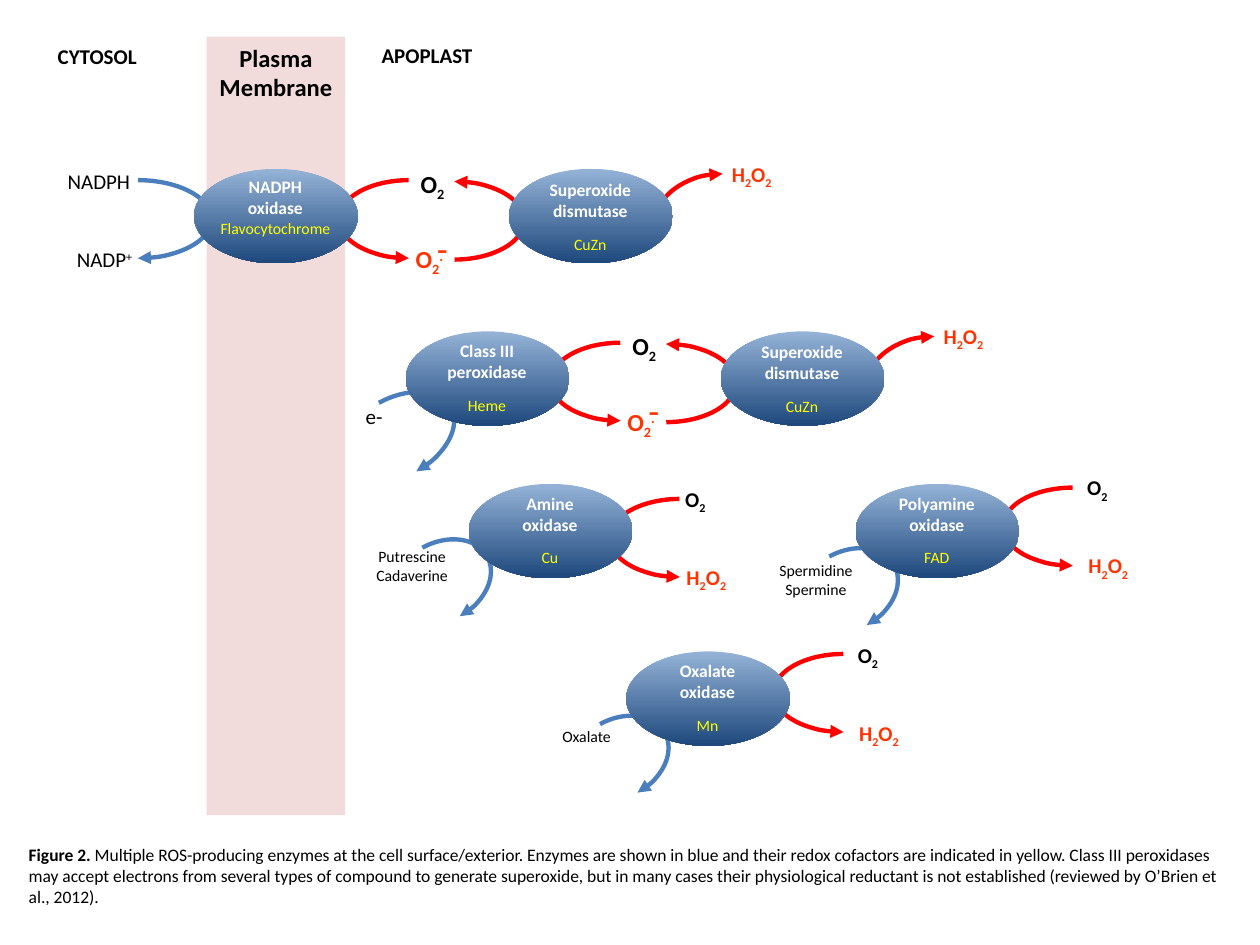
from lxml.etree import SubElement
from pptx import Presentation
from pptx.dml.color import RGBColor
from pptx.enum.shapes import MSO_SHAPE
from pptx.enum.text import MSO_AUTO_SIZE, PP_ALIGN
from pptx.oxml.ns import qn
from pptx.util import Inches, Pt

COLORS = {
    "black": "000000", "white": "FFFFFF", "red": "FF0000", "product": "FF3300",
    "blue": "4B7EBC", "cofactor": "FFFF00", "membrane": "F2DCDB",
    "enzyme_top": "95B3D7", "enzyme_bottom": "1F497D",
}

# Formulas are runs of (text, baseline shift)
SUB, SUP = -25000, 30000
O2 = [("O", 0), ("2", SUB)]
H2O2 = O2 and [("H", 0), ("2", SUB), ("O", 0), ("2", SUB)]
SUPEROXIDE = O2 + [(".", SUP)]
NADP = [("NADP", 0), ("+", SUP)]

MEMBRANE = (1.64, 0.29, 1.1, 6.18)
ENZYME_SIZE = (1.3, 0.75)

# The two chains repeat one layout; positions are those of the first chain
CHAINS = [
    {"shift": (0, 0), "name": "NADPH oxidase", "cofactor": "Flavocytochrome",
     "text_dy": (0.01, 0.35)},
    {"shift": (1.68, 1.29), "name": "Class III peroxidase", "cofactor": "Heme",
     "text_dy": (0.02, 0.46)},
]

# enzyme, product arc, O2 label and substrate arc positions
OXIDASES = [
    {"name": "Amine oxidase", "cofactor": "Cu", "at": (3.72, 3.84),
     "product_arc": (4.84, 3.96), "o2": (5.34, 3.81), "substrate_arc": (3.08, 4.31)},
    {"name": "Polyamine oxidase", "cofactor": "FAD", "at": (6.79, 3.84),
     "product_arc": (7.96, 3.87), "o2": (8.53, 3.72), "substrate_arc": (6.31, 4.38)},
    {"name": "Oxalate oxidase", "cofactor": "Mn", "at": (4.97, 5.17),
     "product_arc": (6.14, 5.19), "o2": (6.71, 5.05), "substrate_arc": (4.49, 5.71)},
]

# box, lines, size, bold, centred
LABELS = [
    ((0.36, 0.3, 0.84, 0.3), ["CYTOSOL"], 12, True, False),
    ((2.93, 0.29, 0.93, 0.3), ["APOPLAST"], 12, True, False),
    ((1.64, 0.29, 1.1, 0.57), ["Plasma", "Membrane"], 14, True, True),
    ((0.43, 1.29, 0.71, 0.3), ["NADPH"], 12, False, True),
    ((0.5, 1.91, 0.66, 0.3), [NADP], 12, False, True),
    ((2.8, 3.15, 0.34, 0.3), ["e-"], 12, False, True),
    ((2.88, 4.29, 0.78, 0.4), ["Putrescine", "Cadaverine"], 9, False, True),
    ((6.08, 4.4, 0.79, 0.4), ["Spermidine", "Spermine"], 9, False, True),
    ((4.36, 5.72, 0.59, 0.25), ["Oxalate"], 9, False, True),
]

CAPTION_TITLE = "Figure 2. "
CAPTION = (
    "Multiple ROS-producing enzymes at the cell surface/exterior. Enzymes are shown "
    "in blue and their redox cofactors are indicated in yellow. Class III peroxidases "
    "may accept electrons from several types of compound to generate superoxide, but "
    "in many cases their physiological reductant is not established (reviewed by "
    "O’Brien et al., 2012)."
)

# Arc styles: size, flips, rotation, end of sweep, colour
HALF, LONG = 53.726, 212.156
ARCS = {
    "electron": ((1.17, 0.62), "V", 0, HALF, "blue"),
    "donor": ((0.97, 0.62), "V", 331.1, HALF, "blue"),
    "substrate": ((0.84, 0.62), "V", 331.1, HALF, "blue"),
    "product": ((1.11, 0.62), "HV", 0, HALF, "red"),
    "recycle": ((1.11, 0.62), "HV", 180, HALF, "red"),
    "peroxide": ((1.11, 0.87), "H", 0, LONG, "red"),
}


def rgb(name):
    return RGBColor.from_string(COLORS[name])


def inches(box):
    return [Inches(v) for v in box]


def shifted(at, by):
    return tuple(a + b for a, b in zip(at, by))


def add_text(shapes, box, lines, size, color="black", bold=False,
             centred=False, wrap=False, font="Calibri"):
    """Each line is a string or a list of (text, baseline shift) runs."""
    tf = shapes.add_textbox(*inches(box)).text_frame
    tf.word_wrap = wrap
    tf.auto_size = MSO_AUTO_SIZE.SHAPE_TO_FIT_TEXT
    for i, line in enumerate(lines):
        p = tf.add_paragraph() if i else tf.paragraphs[0]
        p.alignment = PP_ALIGN.CENTER if centred else PP_ALIGN.LEFT
        for text, shift in [(line, 0)] if isinstance(line, str) else line:
            r = p.add_run()
            r.text = text
            style = {"size": Pt(size), "bold": bold, "name": font}
            for key, value in style.items():
                setattr(r.font, key, value)
            r.font.color.rgb = rgb(color)
            if shift:
                r.font._element.set("baseline", str(shift))
    return tf


def add_arc(shapes, kind, at):
    size, flips, rotation, end, color = ARCS[kind]
    s = shapes.add_shape(MSO_SHAPE.ARC, *inches(at + size))
    s.shadow.inherit = False
    s.adjustments[0], s.adjustments[1] = 162, end
    s.rotation = rotation
    for axis in flips:
        s.element.spPr.xfrm.set("flip" + axis, "1")
    s.fill.background()
    s.line.color.rgb = rgb(color)
    s.line.width = Pt(2.5)
    SubElement(s.element.spPr.find(qn("a:ln")), qn("a:headEnd"), type="triangle")


def add_enzyme(shapes, at, name, cofactor, text_dy=(0.02, 0.46)):
    group = shapes.add_group_shape().shapes
    s = group.add_shape(MSO_SHAPE.OVAL, *inches(at + ENZYME_SIZE))
    s.shadow.inherit = False
    s.line.fill.background()
    s.fill.gradient()
    s.fill.gradient_angle = 270
    stops = ((0, "enzyme_top"), (0.99, "enzyme_bottom"))
    for stop, (position, color) in zip(s.fill.gradient_stops, stops):
        stop.position = position
        stop.color.rgb = rgb(color)
    name_dy, cofactor_dy = text_dy
    add_text(group, shifted(at, (0.14, name_dy)) + (1.01, 0.44), name.split("\n"),
             10, "white", bold=True, centred=True, wrap=True)
    add_text(group, shifted(at, (-0.07, cofactor_dy)) + (1.43, 0.25), [cofactor],
             9, "cofactor", centred=True, wrap=True)


def add_peroxide(shapes, at):
    add_text(shapes, at + (0.54, 0.3), [H2O2], 12, "product", bold=True)


def add_chain(shapes, shift, name, cofactor, text_dy):
    """An oxidase making superoxide, and the dismutase that consumes it."""
    def at(x, y):
        return shifted((x, y), shift)

    add_enzyme(shapes, at(1.54, 1.34), name, cofactor, text_dy)
    add_enzyme(shapes, at(4.04, 1.34), "Superoxide\ndismutase", "CuZn", (0.03, 0.47))
    add_text(shapes, at(3.24, 1.29) + (0.4, 0.34), [O2], 14, bold=True)
    add_peroxide(shapes, at(5.71, 1.23))
    group = shapes.add_group_shape().shapes
    add_text(group, at(3.2, 1.89) + (0.92, 0.34), [SUPEROXIDE], 14, "product",
             bold=True, wrap=True)
    add_text(group, at(3.37, 1.76) + (0.28, 0.4), ["-"], 18, "product",
             bold=True, font="Times New Roman")


def add_arcs(shapes):
    add_arc(shapes, "electron", (0.51, 1.43))
    add_arc(shapes, "donor", (2.67, 3.16))
    for chain in CHAINS:
        for kind, at in (("recycle", (3.05, 1.44)), ("peroxide", (5.18, 1.38)),
                         ("product", (2.69, 1.43))):
            add_arc(shapes, kind, shifted(at, chain["shift"]))
    for oxidase in OXIDASES:
        for kind in ("substrate", "product"):
            add_arc(shapes, kind, oxidase[kind + "_arc"])


def main():
    prs = Presentation()
    prs.slide_width, prs.slide_height = Inches(10), Inches(7.5)
    shapes = prs.slides.add_slide(prs.slide_layouts[6]).shapes

    add_arcs(shapes)
    membrane = shapes.add_shape(MSO_SHAPE.RECTANGLE, *inches(MEMBRANE))
    membrane.shadow.inherit = False
    membrane.fill.solid()
    membrane.fill.fore_color.rgb = rgb("membrane")
    membrane.line.fill.background()

    for box, lines, size, bold, centred in LABELS:
        add_text(shapes, box, lines, size, bold=bold, centred=centred)
    for chain in CHAINS:
        add_chain(shapes, **chain)
    for oxidase in OXIDASES:
        add_enzyme(shapes, oxidase["at"], oxidase["name"], oxidase["cofactor"])
        add_text(shapes, oxidase["o2"] + (0.37, 0.3), [O2], 12, bold=True)
        add_peroxide(shapes, shifted(oxidase["o2"], (0.01, 0.62)))

    caption = add_text(shapes, (0.13, 6.65, 9.76, 0.61),
                       [[(CAPTION_TITLE, 0), (CAPTION, 0)]], 10, wrap=True)
    caption.paragraphs[0].runs[0].font.bold = True
    prs.save("out.pptx")


if __name__ == "__main__":
    main()
